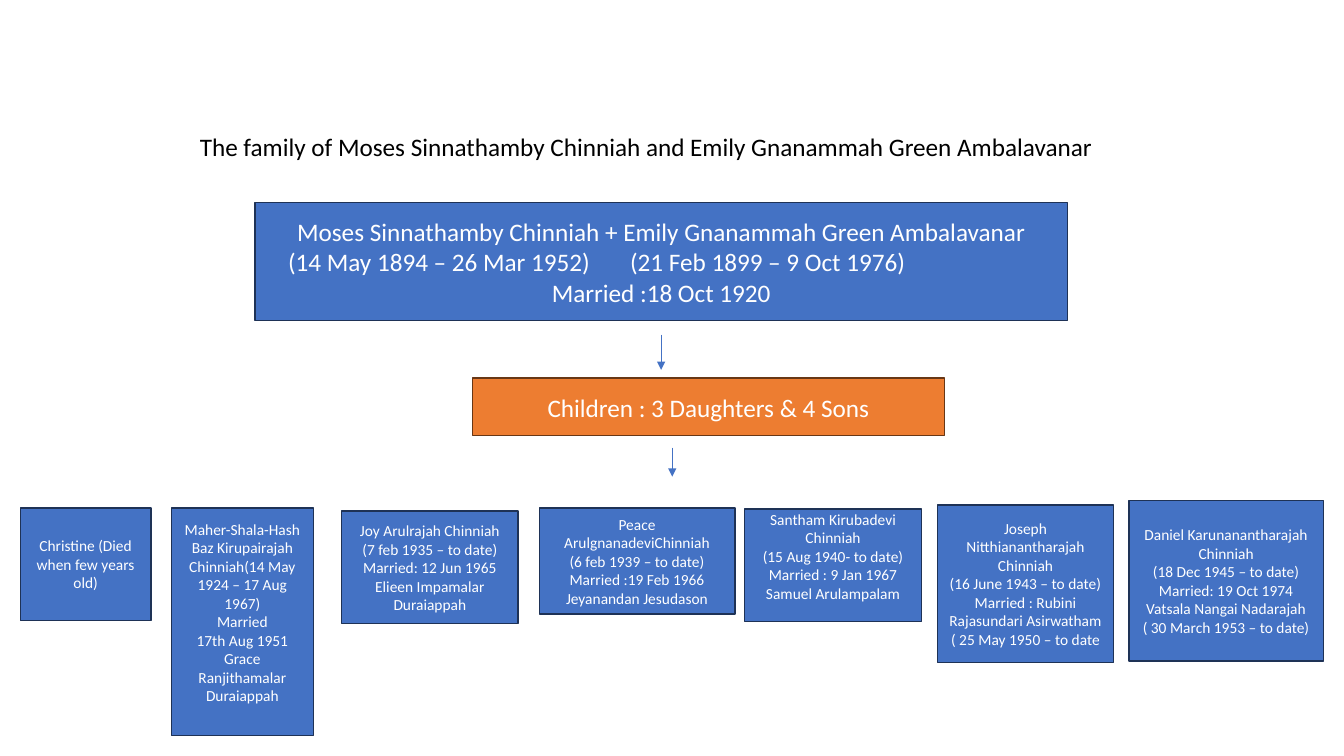
"""Build a one-slide family tree of parents and their seven children."""
from lxml.etree import SubElement
from pptx import Presentation
from pptx.dml.color import RGBColor
from pptx.enum.shapes import MSO_CONNECTOR, MSO_SHAPE
from pptx.enum.text import MSO_ANCHOR, MSO_AUTO_SIZE, PP_ALIGN
from pptx.oxml.ns import qn
from pptx.util import Cm, Pt

BLUE = RGBColor(0x44, 0x72, 0xC4)
NAVY = RGBColor(0x1E, 0x32, 0x56)
ORANGE = RGBColor(0xED, 0x7D, 0x31)
BROWN = RGBColor(0x68, 0x37, 0x15)
WHITE = RGBColor(0xFF, 0xFF, 0xFF)
BLACK = RGBColor(0, 0, 0)

CHILDREN = [
    (0.51, 12.8, 3.3, 2.84, ["Christine (Died when few years old)"], {}),
    (4.32, 12.8, 3.58, 5.74,
     ["Maher-Shala-Hash Baz Kirupairajah Chinniah(14 May 1924 – 17 Aug 1967)",
      "Married", "17th Aug 1951", "Grace Ranjithamalar Duraiappah"],
     {"bottom": 0.6}),
    (8.61, 12.88, 4.45, 2.84,
     ["Joy Arulrajah Chinniah", "(7 feb 1935 – to date)",
      "Married: 12 Jun 1965", "Elieen Impamalar Duraiappah"], {}),
    (13.59, 12.8, 4.93, 2.67,
     ["Peace ArulgnanadeviChinniah", "(6 feb 1939 – to date)",
      "Married :19 Feb 1966", "Jeyanandan Jesudason"], {}),
    (18.77, 12.83, 4.45, 2.84,
     ["Santham Kirubadevi Chinniah", "(15 Aug 1940- to date)",
      "Married : 9 Jan 1967", "Samuel Arulampalam"],
     {"top": 0, "bottom": 0.47}),
    (23.62, 12.73, 4.45, 3.96,
     ["Joseph Nitthianantharajah Chinniah", "(16 June 1943 – to date)",
      "Married : Rubini Rajasundari Asirwatham ( 25 May 1950 – to date"], {}),
    (28.45, 12.62, 4.9, 4.04,
     ["Daniel Karunanantharajah Chinniah", "(18 Dec 1945 – to date)",
      "Married: 19 Oct 1974", "Vatsala Nangai Nadarajah",
      "( 30 March 1953 – to date)"], {}),
]


def write(paragraph, text, size=18, color=WHITE, align=PP_ALIGN.CENTER, tabs=()):
    """Put formatted text into a paragraph, with tab stops given in cm."""
    paragraph.alignment = align
    run = paragraph.add_run()
    run.text = text
    run.font.name = "Calibri"
    run.font.size = Pt(size)
    run.font.color.rgb = color
    if tabs:
        stops = SubElement(paragraph._p.get_or_add_pPr(), qn("a:tabLst"))
        for position in tabs:
            SubElement(stops, qn("a:tab"), pos=str(Cm(position)), algn="l")


class FamilyTree:
    """Hold the tree's style and current slide."""

    def __init__(self, slide):
        """Keep the slide to draw on."""
        self.slide = slide

    def title(self, left, top, width, height, text):
        """Move and fill the title placeholder."""
        heading = self.slide.shapes.title
        heading.left, heading.top = Cm(left), Cm(top)
        heading.width, heading.height = Cm(width), Cm(height)
        frame = heading.text_frame
        frame.auto_size = MSO_AUTO_SIZE.NONE
        frame.word_wrap = False
        frame.vertical_anchor = MSO_ANCHOR.TOP
        write(frame.paragraphs[0], text, color=BLACK, align=PP_ALIGN.LEFT)

    def box(self, left, top, width, height, fill=BLUE, border=NAVY):
        """Draw a filled box and return its text frame."""
        person = self.slide.shapes.add_shape(
            MSO_SHAPE.RECTANGLE, Cm(left), Cm(top), Cm(width), Cm(height))
        person.shadow.inherit = False
        person.fill.solid()
        person.fill.fore_color.rgb = fill
        person.line.color.rgb = border
        person.line.width = Pt(1)
        frame = person.text_frame
        frame.word_wrap = True
        frame.vertical_anchor = MSO_ANCHOR.MIDDLE
        return frame

    def child(self, left, top, width, height, lines, top_inset=0.13, bottom=0.13):
        """Draw one child's box with its lines of text."""
        frame = self.box(left, top, width, height)
        frame.margin_top, frame.margin_bottom = Cm(top_inset), Cm(bottom)
        for index, line in enumerate(lines):
            write(frame.add_paragraph() if index else frame.paragraphs[0], line, size=11)

    def arrow(self, x, top, bottom):
        """Draw a downward arrow."""
        descent = self.slide.shapes.add_connector(
            MSO_CONNECTOR.STRAIGHT, Cm(x), Cm(top), Cm(x), Cm(bottom))
        descent.line.color.rgb = BLUE
        descent.line.width = Pt(0.5)
        SubElement(descent.line._get_or_add_ln(), qn("a:tailEnd"), type="triangle")
        SubElement(descent._element.spPr, qn("a:effectLst"))


def main():
    """Build and save the slide."""
    deck = Presentation()
    deck.slide_width, deck.slide_height = Cm(33.87), Cm(19.05)
    tree = FamilyTree(deck.slides.add_slide(deck.slide_layouts[5]))

    tree.title(4.78, 3.18, 23.06, 1.02,
               "The family of Moses Sinnathamby Chinniah and Emily Gnanammah Green Ambalavanar")

    parents = tree.box(6.43, 5.11, 20.47, 2.97)
    write(parents.paragraphs[0],
          "Moses Sinnathamby Chinniah + Emily Gnanammah Green Ambalavanar")
    write(parents.add_paragraph(),
          "\t(14 May 1894 – 26 Mar 1952)\t(21 Feb 1899 – 9 Oct 1976)",
          align=PP_ALIGN.LEFT, tabs=(0.58, 9.2))
    write(parents.add_paragraph(), "Married :18 Oct 1920")

    tree.arrow(16.66, 8.43, 9.32)
    summary = tree.box(11.91, 9.53, 11.89, 1.45, fill=ORANGE, border=BROWN)
    write(summary.paragraphs[0], "Children : 3 Daughters & 4 Sons")
    tree.arrow(16.94, 11.28, 12.01)

    for left, top, width, height, lines, insets in CHILDREN:
        tree.child(left, top, width, height, lines,
                   top_inset=insets.get("top", 0.13),
                   bottom=insets.get("bottom", 0.13))

    deck.save("out.pptx")


if __name__ == "__main__":
    main()
